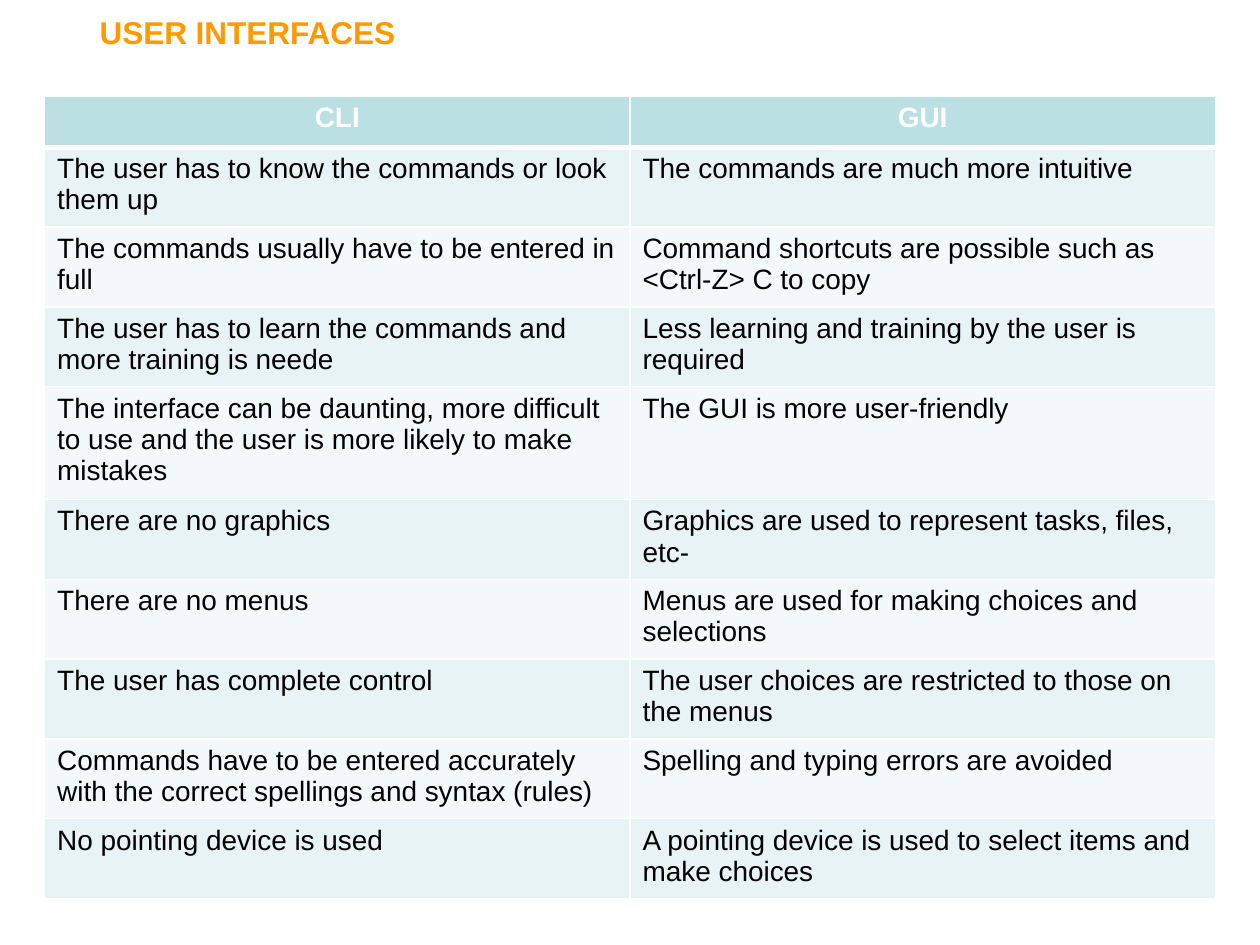
from lxml.etree import SubElement
from pptx import Presentation
from pptx.dml.color import RGBColor
from pptx.enum.text import MSO_ANCHOR, MSO_AUTO_SIZE, PP_ALIGN
from pptx.oxml.ns import qn
from pptx.util import Pt

FONT = "Arial"
ORANGE = RGBColor(0xFF, 0x99, 0x00)
WHITE = RGBColor(0xFF, 0xFF, 0xFF)
BLACK = RGBColor(0x00, 0x00, 0x00)
HEADER_TEAL = RGBColor(0xBB, 0xE0, 0xE3)
BANDS = (RGBColor(0xE7, 0xF3, 0xF4), RGBColor(0xF3, 0xF9, 0xFA))

HEADER_HEIGHT, ROW_HEIGHT, TALL_HEIGHT = 29.2, 45.6, 64.5
TALL_ROW = 4  # the only row whose text takes three lines
COLUMN_WIDTH = 334.5

COMPARISON = [
    ("CLI", "GUI"),
    ("The user has to know the commands or look them up",
     "The commands are much more intuitive"),
    ("The commands usually have to be entered in full",
     "Command shortcuts are possible such as <Ctrl-Z> C to copy"),
    ("The user has to learn the commands and more training is neede",
     "Less learning and training by the user is required"),
    ("The interface can be daunting, more difficult to use and the user "
     "is more likely to make mistakes",
     "The GUI is more user-friendly"),
    ("There are no graphics",
     "Graphics are used to represent tasks, files, etc-"),
    ("There are no menus",
     "Menus are used for making choices and selections"),
    ("The user has complete control",
     "The user choices are restricted to those on the menus"),
    ("Commands have to be entered accurately with the correct spellings "
     "and syntax (rules)",
     "Spelling and typing errors are avoided"),
    ("No pointing device is used",
     "A pointing device is used to select items and make choices"),
]


def add_span(para, text, size, color, bold):
    span = para.add_run()
    span.text = text
    span.font.name = FONT
    span.font.size = Pt(size)
    span.font.bold = bold
    span.font.color.rgb = color


def add_title(page, text):
    box = page.shapes.title
    box.left, box.top, box.width, box.height = Pt(0), Pt(0), Pt(240.5), Pt(36)
    frame = box.text_frame
    frame.word_wrap = False
    frame.auto_size = MSO_AUTO_SIZE.NONE
    frame.vertical_anchor = MSO_ANCHOR.TOP
    frame.margin_left = Pt(56.9)
    frame.margin_top = frame.margin_right = frame.margin_bottom = Pt(7.2)
    para = frame.paragraphs[0]
    para.alignment = PP_ALIGN.LEFT
    add_span(para, text, 18, ORANGE, True)


def set_borders(cell, widths):
    """Draw white lines; widths maps a side (L, R, T, B) to points."""
    properties = cell._tc.get_or_add_tcPr()
    for side, width in widths.items():
        line = SubElement(properties, qn(f"a:ln{side}"), w=str(Pt(width)))
        fill = SubElement(line, qn("a:solidFill"))
        SubElement(fill, qn("a:srgbClr"), val=str(WHITE))


def fill_cell(cell, text, row):
    header = row == 0
    set_borders(cell, {"L": 1, "R": 1, "T": 3 if row == 1 else 1,
                       "B": 3 if header else 1})
    cell.fill.solid()
    cell.fill.fore_color.rgb = HEADER_TEAL if header else BANDS[(row - 1) % 2]
    para = cell.text_frame.paragraphs[0]
    para.alignment = PP_ALIGN.CENTER if header else PP_ALIGN.LEFT
    add_span(para, text, 16, WHITE if header else BLACK, header)


def add_comparison(page, rows):
    heights = [HEADER_HEIGHT] + [ROW_HEIGHT] * (len(rows) - 1)
    heights[TALL_ROW] = TALL_HEIGHT
    table = page.shapes.add_table(
        len(rows), 2, Pt(25.5), Pt(55),
        Pt(2 * COLUMN_WIDTH), Pt(sum(heights))).table
    for column in table.columns:
        column.width = Pt(COLUMN_WIDTH)
    for row, (texts, height) in enumerate(zip(rows, heights)):
        table.rows[row].height = Pt(height)
        for column, text in enumerate(texts):
            fill_cell(table.cell(row, column), text, row)


def main():
    deck = Presentation()
    deck.slide_width, deck.slide_height = Pt(720), Pt(540)
    page = deck.slides.add_slide(deck.slide_layouts[5])  # title only

    # Heading
    add_title(page, "USER INTERFACES")
    # Comparison of the two kinds of interface
    add_comparison(page, COMPARISON)

    deck.save("out.pptx")


if __name__ == "__main__":
    main()
